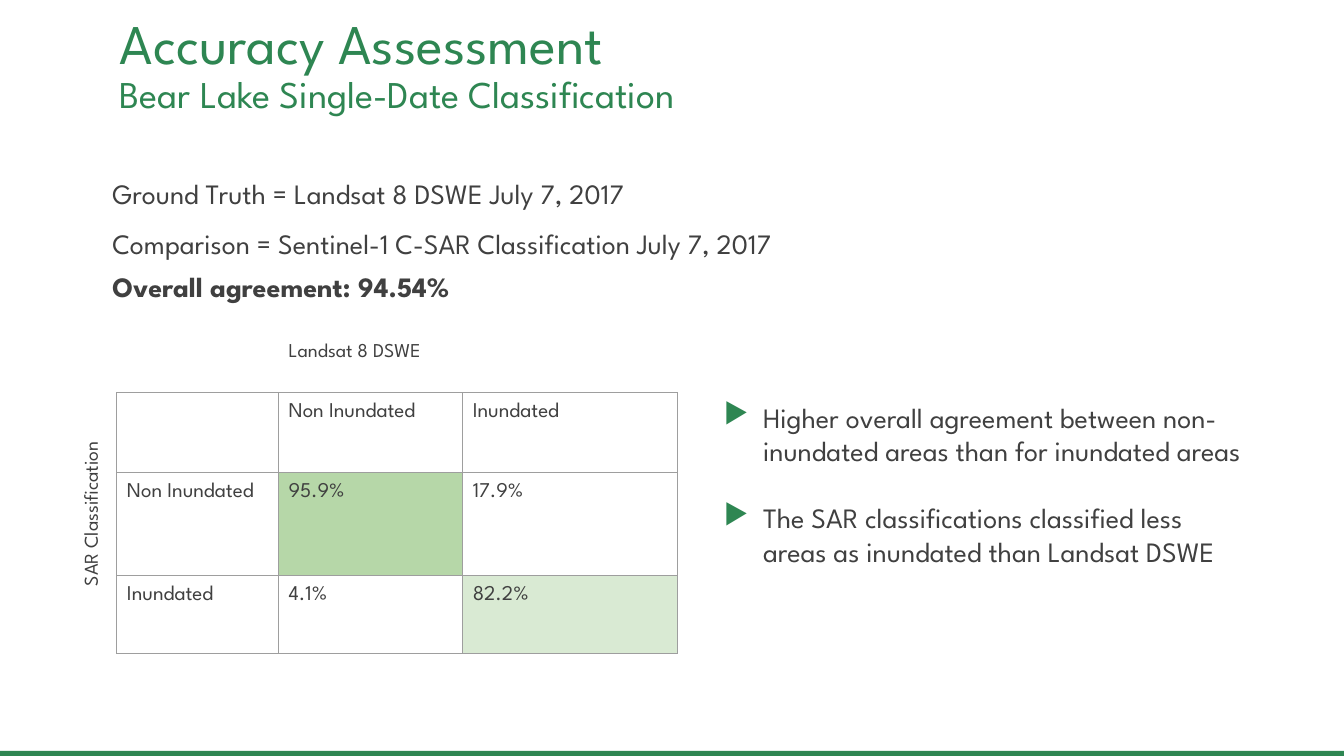
from lxml import etree
from pptx import Presentation
from pptx.dml.color import RGBColor
from pptx.enum.shapes import MSO_SHAPE
from pptx.enum.text import MSO_ANCHOR, MSO_AUTO_SIZE, PP_ALIGN
from pptx.oxml.ns import qn
from pptx.util import Pt

RECTANGLE = MSO_SHAPE.RECTANGLE
MIDDLE, TOP = MSO_ANCHOR.MIDDLE, MSO_ANCHOR.TOP
NO_FIT = MSO_AUTO_SIZE.NONE
LEFT = PP_ALIGN.LEFT

GREEN, INK, GRID = "2E8652", "404040", "9E9E9E"
FONT = "League Spartan"
INSET = 7.2


def color(code):
    """Turn a hex string into a colour."""
    return RGBColor.from_string(code)


class SlideBuilder:
    """Holds the style and the current slide."""

    def __init__(self, page):
        """Keep the slide that is being built."""
        self.page = page

    def add_span(self, para, text, size, code=INK, bold=False):
        """Add one styled run to a paragraph."""
        para.alignment = LEFT
        span = para.add_run()
        span.text = text
        span.font.name = FONT
        span.font.size = Pt(size)
        span.font.bold = bold
        span.font.color.rgb = color(code)

    def frame(self, box, anchor=TOP, inset=INSET):
        """Prepare a text frame with the common margins."""
        frame = box.text_frame
        frame.word_wrap = True
        frame.auto_size = NO_FIT
        frame.vertical_anchor = anchor
        frame.margin_left = frame.margin_right = Pt(INSET)
        frame.margin_top = frame.margin_bottom = Pt(inset)
        return frame

    def title(self, place, lines):
        """Move the title placeholder and fill it line by line."""
        box = self.page.shapes.title
        box.left, box.top, box.width, box.height = map(Pt, place)
        frame = self.frame(box, MIDDLE, 3.6)
        for index, (text, size) in enumerate(lines):
            para = frame.add_paragraph() if index else frame.paragraphs[0]
            para.line_spacing = 0.9
            para.space_before = Pt(0)
            self.add_span(para, text, size, GREEN)

    def text(self, place, lines, size, bold=False, spacing=1.0, inset=INSET,
             bullet=None, gap=0, rotation=0):
        """Add a text box, with bullets if a mark is given."""
        box = self.page.shapes.add_textbox(*map(Pt, place))
        box.rotation = rotation
        frame = self.frame(box, inset=inset)
        for index, line in enumerate(lines):
            para = frame.add_paragraph() if index else frame.paragraphs[0]
            para.line_spacing = spacing
            if index:
                para.space_before = Pt(gap)
            if bullet:
                self.bullet(para, bullet)
            self.add_span(para, line, size, bold=bold)

    def bullet(self, para, mark):
        """Give a paragraph a green bullet and a hanging indent."""
        props = para._p.get_or_add_pPr()
        props.set("marL", str(Pt(36)))
        props.set("indent", str(Pt(-28)))
        tint = etree.SubElement(props, qn("a:buClr"))
        etree.SubElement(tint, qn("a:srgbClr"), val=GREEN)
        etree.SubElement(props, qn("a:buChar"), char=mark)

    def border(self, cell, sides):
        """Draw the named sides of a cell and hide the others."""
        props = cell._tc.get_or_add_tcPr()
        for side in "LRTB":
            line = etree.SubElement(props, qn(f"a:ln{side}"), w=str(Pt(0.75)))
            if side in sides:
                fill = etree.SubElement(line, qn("a:solidFill"))
                etree.SubElement(fill, qn("a:srgbClr"), val=GRID)
            else:
                etree.SubElement(line, qn("a:noFill"))

    def table(self, left, top, widths, heights, rows, fills):
        """Add the matrix, whose first row is a heading without a frame."""
        table = self.page.shapes.add_table(
            len(rows), len(widths), Pt(left), Pt(top),
            Pt(sum(widths)), Pt(sum(heights))).table
        table.first_row = table.horz_banding = False
        for column, width in zip(table.columns, widths):
            column.width = Pt(width)
        for row, height in zip(table.rows, heights):
            row.height = Pt(height)
        for r, values in enumerate(rows):
            for c, value in enumerate(values):
                cell = table.cell(r, c)
                cell.margin_left = cell.margin_right = Pt(INSET)
                cell.margin_top = cell.margin_bottom = Pt(INSET)
                self.border(cell, "LRTB" if r else "B")
                if (r, c) in fills:
                    cell.fill.solid()
                    cell.fill.fore_color.rgb = color(fills[r, c])
                else:
                    cell.fill.background()
                if value:
                    self.add_span(cell.text_frame.paragraphs[0], value,
                                  15 if r else 14)
        table.cell(0, 1).merge(table.cell(0, 2))

    def bar(self, place, code):
        """Add a plain filled rectangle."""
        shape = self.page.shapes.add_shape(RECTANGLE, *map(Pt, place))
        shape.shadow.inherit = False
        shape.fill.solid()
        shape.fill.fore_color.rgb = color(code)
        shape.line.fill.background()


def main():
    """Build the accuracy assessment slide."""
    deck = Presentation()
    deck.slide_width, deck.slide_height = Pt(960), Pt(540)
    slide = SlideBuilder(deck.slides.add_slide(deck.slide_layouts[5]))
    slide.bar((0, 536.4, 960, 3.6), GREEN)
    slide.title((78.5, 28.8, 741, 37.4), [
        ("Accuracy Assessment", 40),
        ("Bear Lake Single-Date Classification", 27)])
    slide.table(
        83.5, 238.3, (115.5, 131.5, 153.5), (42.2, 57, 73.7, 55.3),
        [("", "Landsat 8 DSWE", ""),
         ("", "Non Inundated", "Inundated"),
         ("Non Inundated", "95.9%", "17.9%"),
         ("Inundated", "4.1%", "82.2%")],
        {(2, 1): "B6D7A8", (3, 2): "D9EAD3"})
    slide.text((-10, 342, 142.5, 25), ["SAR Classification"], 14, rotation=270)
    slide.text((73.2, 185, 312.5, 22.5), ["Overall agreement: 94.54%"], 20,
               bold=True)
    slide.text((502, 278.6, 393, 250.5), [
        "Higher overall agreement between non-inundated areas than for "
        "inundated areas",
        "The SAR classifications classified less areas as inundated than "
        "Landsat DSWE"], 20, bullet="▶", gap=24)
    slide.text((73.2, 110.2, 596, 80), [
        "Ground Truth = Landsat 8 DSWE July 7, 2017",
        "Comparison = Sentinel-1 C-SAR Classification July 7, 2017"], 20,
        spacing=1.5, inset=3.6)
    deck.save("out.pptx")


if __name__ == "__main__":
    main()
